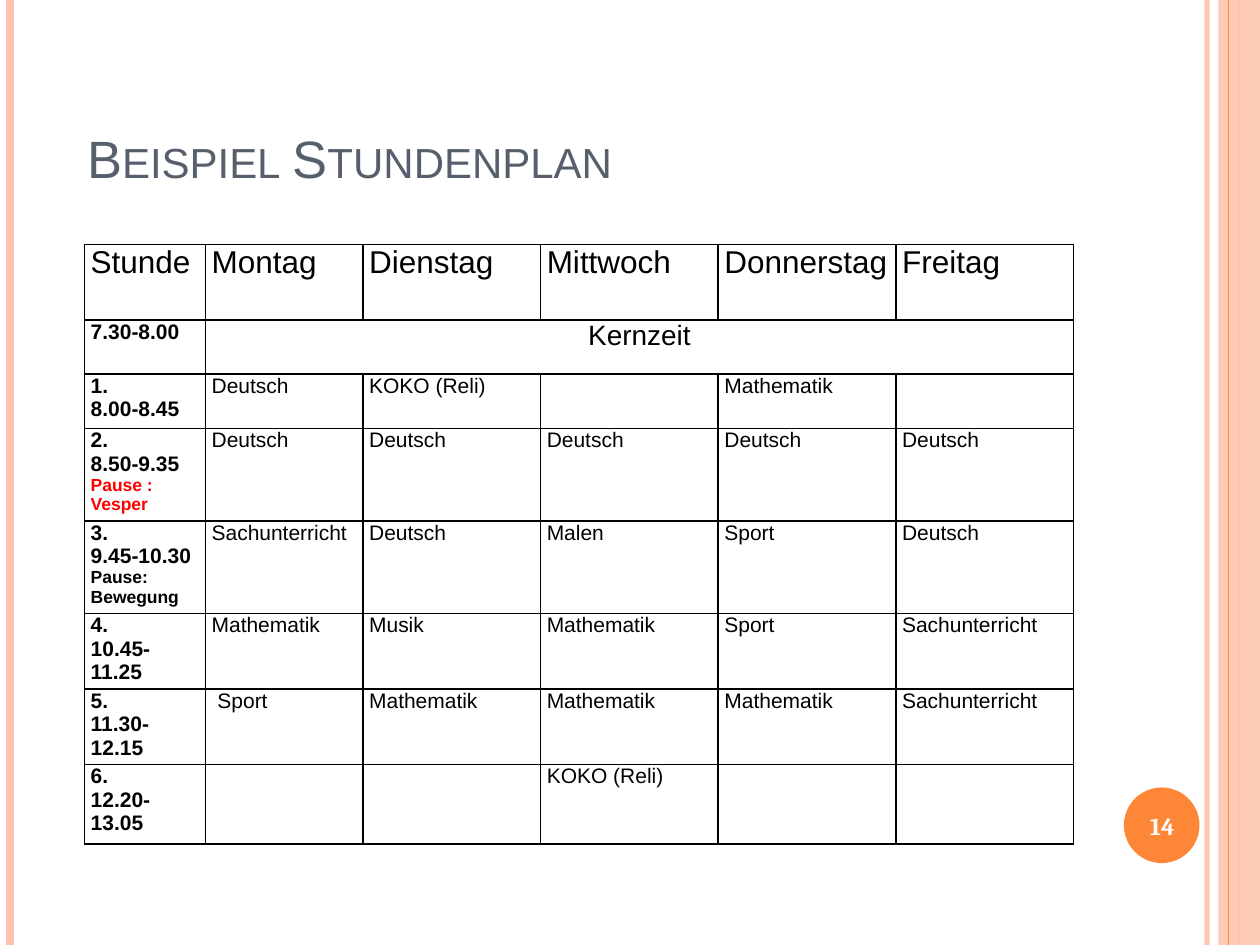
"""Build the timetable slide with python-pptx."""
import pptx
import pptx.dml.color
import pptx.enum.shapes
import pptx.enum.text
import pptx.oxml
import pptx.oxml.ns
import pptx.util
from pptx.util import Inches

COLORS = {
    "peach": "FEC3AE",
    "orange": "FE8637",
    "title": "575F6D",
    "black": "000000",
    "red": "FF0000",
    "white": "FFFFFF",
}
COL_WIDTHS = [0.96, 1.25] + [1.41] * 4
ROW_HEIGHTS = [0.6, 0.43, 0.43, 0.73, 0.73, 0.6, 0.6, 0.63]
DAYS = ["Stunde", "Montag", "Dienstag", "Mittwoch", "Donnerstag", "Freitag"]
LESSONS = [
    (["1.", "8.00-8.45"], None, ["Deutsch", "KOKO (Reli)", "", "Mathematik", ""]),
    (["2.", "8.50-9.35"], ("Pause : Vesper", "red"), ["Deutsch"] * 5),
    (["3.", "9.45-10.30"], ("Pause: Bewegung", "black"),
     ["Sachunterricht", "Deutsch", "Malen", "Sport", "Deutsch"]),
    (["4.", "10.45-11.25"], None,
     ["Mathematik", "Musik", "Mathematik", "Sport", "Sachunterricht"]),
    (["5.", "11.30-12.15"], None,
     [" Sport", "Mathematik", "Mathematik", "Mathematik", "Sachunterricht"]),
    (["6.", "12.20-13.05"], None, ["", "", "KOKO (Reli)", "", ""]),
]
ALIGN = pptx.enum.text.PP_ALIGN
ANCHOR = pptx.enum.text.MSO_ANCHOR
SHAPE = pptx.enum.shapes.MSO_SHAPE


def rgb(name):
    return pptx.dml.color.RGBColor.from_string(COLORS[name])


def set_alpha(element, percent):
    color = element.find(".//" + pptx.oxml.ns.qn("a:srgbClr"))
    ns = pptx.oxml.ns.nsdecls("a")
    color.append(pptx.oxml.parse_xml(f'<a:alpha {ns} val="{percent * 1000}"/>'))


def add_run(p, text, size, color="black", bold=False, font="Arial"):
    r = p.add_run()
    r.text = text
    r.font.size = pptx.util.Pt(size)
    r.font.name = font
    r.font.bold = bold
    r.font.color.rgb = rgb(color)
    return r


def add_stripe(s, x, width, color, alpha=100):
    line = s.shapes.add_connector(
        pptx.enum.shapes.MSO_CONNECTOR.STRAIGHT,
        Inches(x), 0, Inches(x), Inches(7.5))
    line.line.color.rgb = rgb(color)
    line.line.width = pptx.util.Pt(width)
    sp_pr = line._element.spPr
    sp_pr.append(pptx.oxml.parse_xml(f'<a:effectLst {pptx.oxml.ns.nsdecls("a")}/>'))
    if alpha < 100:
        set_alpha(sp_pr, alpha)


def add_block(s, kind, box, color, alpha=100):
    sp = s.shapes.add_shape(kind, *map(Inches, box))
    sp.shadow.inherit = False
    sp.fill.solid()
    sp.fill.fore_color.rgb = rgb(color)
    sp.line.fill.background()
    if alpha < 100:
        set_alpha(sp._element.spPr, alpha)


def add_text(s, box, anchor, align, text, size, color, **style):
    tf = s.shapes.add_textbox(*map(Inches, box)).text_frame
    tf.word_wrap = True
    tf.vertical_anchor = anchor
    p = tf.paragraphs[0]
    p.alignment = align
    return add_run(p, text, size, color, **style)


def style_cell(cell):
    cell.margin_left = cell.margin_right = Inches(0.05)
    cell.margin_top = cell.margin_bottom = 0
    cell.fill.background()
    tc_pr = cell._tc.get_or_add_tcPr()
    for i, side in enumerate("LRTB"):
        tc_pr.insert(i, pptx.oxml.parse_xml(
            f'<a:ln{side} {pptx.oxml.ns.nsdecls("a")} w="12700"><a:solidFill>'
            f'<a:srgbClr val="{COLORS["black"]}"/></a:solidFill></a:ln{side}>'))


def fill_cell(cell, lines, size, bold=False, note=None):
    tf = cell.text_frame
    for i, line in enumerate(lines):
        p = tf.add_paragraph() if i else tf.paragraphs[0]
        if line:
            add_run(p, line, size, bold=bold)
    if note:
        text, color = note
        add_run(tf.add_paragraph(), text, 10, color, bold)


def add_timetable(s):
    table = s.shapes.add_table(
        len(ROW_HEIGHTS), len(COL_WIDTHS), Inches(0.67), Inches(1.94),
        Inches(sum(COL_WIDTHS)), Inches(sum(ROW_HEIGHTS))).table
    table.first_row = table.horz_banding = False
    for col, width in zip(table.columns, COL_WIDTHS):
        col.width = Inches(width)
    for row, height in zip(table.rows, ROW_HEIGHTS):
        row.height = Inches(height)
    for cell in table.iter_cells():
        style_cell(cell)

    for c, day in enumerate(DAYS):
        fill_cell(table.cell(0, c), [day], 18)
    fill_cell(table.cell(1, 0), ["7.30-8.00"], 12, bold=True)
    core = table.cell(1, 1)
    core.merge(table.cell(1, 5))
    fill_cell(core, ["Kernzeit"], 16)
    core.text_frame.paragraphs[0].alignment = ALIGN.CENTER
    for r, (time, note, subjects) in enumerate(LESSONS, 2):
        fill_cell(table.cell(r, 0), time, 12, bold=True, note=note)
        for c, subject in enumerate(subjects, 1):
            fill_cell(table.cell(r, c), [subject], 12)


def main():
    prs = pptx.Presentation()
    prs.slide_width, prs.slide_height = Inches(10), Inches(7.5)
    s = prs.slides.add_slide(prs.slide_layouts[6])

    add_stripe(s, 9.58, 3, "peach", 93)
    add_stripe(s, 0.08, 4.5, "peach")
    add_stripe(s, 9.83, 1.5, "peach")
    add_block(s, SHAPE.RECTANGLE, (9.67, 0, 0.33, 7.5), "peach", 87)
    add_stripe(s, 9.75, 0.75, "orange")
    add_block(s, SHAPE.OVAL, (8.92, 6.25, 0.6, 0.6), "orange")

    title = add_text(s, (0.5, 0.3, 8.17, 1.25), ANCHOR.BOTTOM, ALIGN.LEFT,
                     " Beispiel Stundenplan", 30, "title")
    title._r.get_or_add_rPr().set("cap", "small")
    add_timetable(s)
    add_text(s, (8.89, 6.27, 0.67, 0.57), ANCHOR.MIDDLE, ALIGN.CENTER,
             "14", 14, "white", bold=True, font="Cambria")
    prs.save("out.pptx")


if __name__ == "__main__":
    main()
